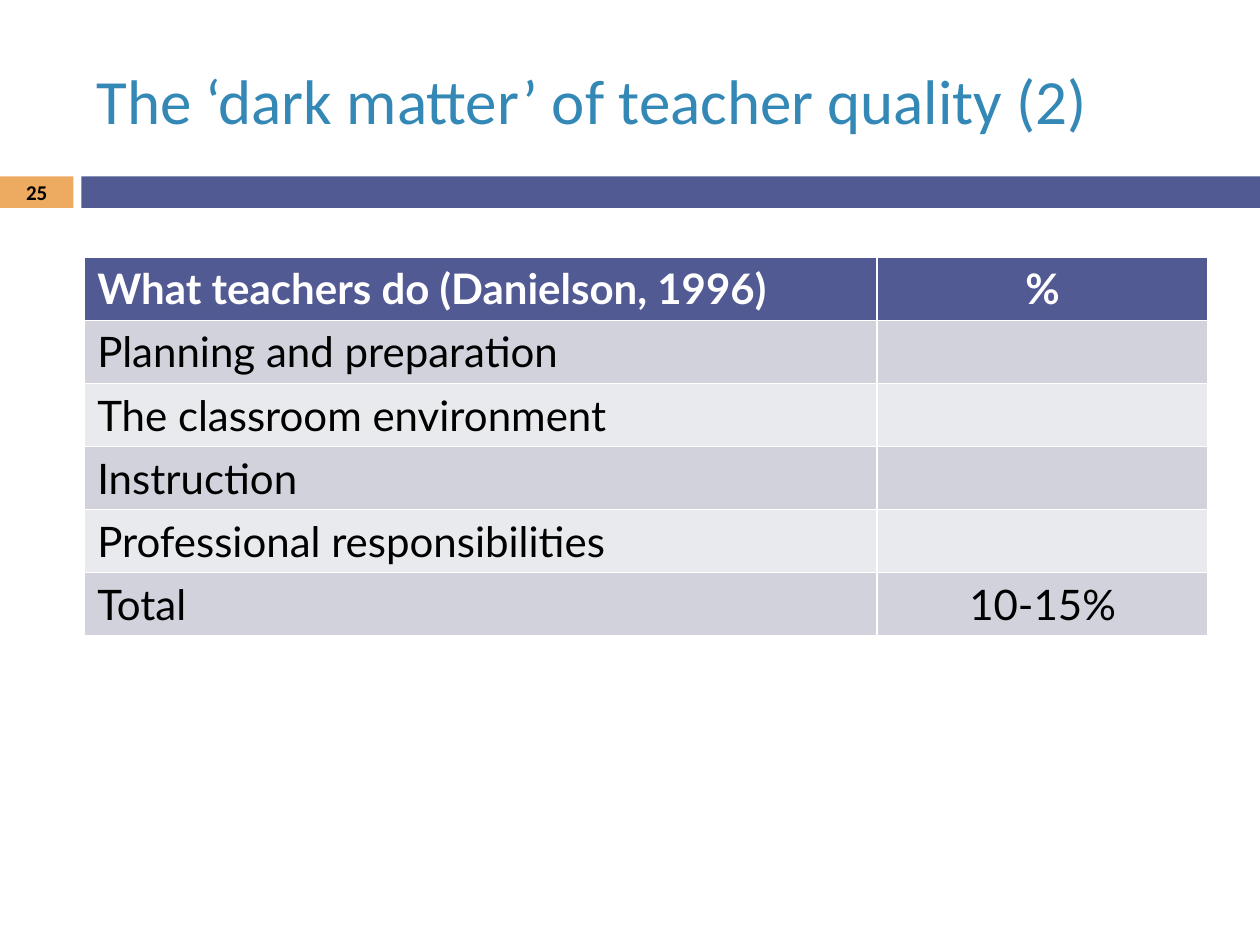
from pptx import Presentation
from pptx.util import Pt
from pptx.dml.color import RGBColor
from pptx.enum.shapes import MSO_SHAPE as Shape
from pptx.enum.text import MSO_ANCHOR as Anchor, MSO_AUTO_SIZE as Fit, PP_ALIGN as Align

WHITE = RGBColor(0xFF, 0xFF, 0xFF)
BLACK = RGBColor(0, 0, 0)
BLUE = RGBColor(0x34, 0x88, 0xB6)
INDIGO = RGBColor(0x52, 0x5A, 0x93)
ORANGE = RGBColor(0xED, 0xAA, 0x61)
BANDS = RGBColor(0xE9, 0xEA, 0xEE), RGBColor(0xD1, 0xD2, 0xDC)

ROWS = [
    ("What teachers do (Danielson, 1996)", "%"),
    ("Planning and preparation", ""),
    ("The classroom environment", ""),
    ("Instruction", ""),
    ("Professional responsibilities", ""),
    ("Total", "10-15%"),
]


def write(frame, text, font="Calibri", size=24, color=BLACK, bold=False, align=Align.LEFT):
    para = frame.paragraphs[0]
    para.alignment = align
    run = para.add_run()
    run.text = text
    run.font.name = font
    run.font.size = Pt(size)
    run.font.bold = bold
    run.font.color.rgb = color


class Deck:
    """Holds the style and the current slide; lengths are in points."""

    head, body = "Calibri", "Lato"

    def __init__(self, wide, high):
        self.file = Presentation()
        self.file.slide_width, self.file.slide_height = Pt(wide), Pt(high)
        self.slide = self.file.slides.add_slide(self.file.slide_layouts[5])

    def bar(self, *box, fill):
        bar = self.slide.shapes.add_shape(Shape.RECTANGLE, *map(Pt, box))
        bar.shadow.inherit = False
        bar.fill.solid()
        bar.fill.fore_color.rgb = fill
        bar.line.fill.background()

    def title(self, text, *box):
        title = self.slide.shapes.title
        title.left, title.top, title.width, title.height = map(Pt, box)
        frame = title.text_frame
        frame.auto_size = Fit.NONE
        frame.vertical_anchor = Anchor.MIDDLE
        write(frame, text, font=self.head, size=36, color=BLUE)

    def label(self, text, *box):
        frame = self.slide.shapes.add_textbox(*map(Pt, box)).text_frame
        frame.word_wrap = True
        frame.vertical_anchor = Anchor.MIDDLE
        write(frame, text, font=self.head, size=12, bold=True, align=Align.CENTER)

    def table(self, rows, left, top, cols, high):
        size = Pt(sum(cols)), Pt(high * len(rows))
        table = self.slide.shapes.add_table(
            len(rows), len(cols), Pt(left), Pt(top), *size).table
        for col, wide in zip(table.columns, cols):
            col.width = Pt(wide)
        for r, row in enumerate(rows):
            top_row = r == 0
            table.rows[r].height = Pt(high)
            for c, text in enumerate(row):
                cell = table.cell(r, c)
                cell.fill.solid()
                cell.fill.fore_color.rgb = INDIGO if top_row else BANDS[r % 2]
                if text:
                    write(cell.text_frame, text, font=self.body, bold=top_row,
                          color=WHITE if top_row else BLACK,
                          align=Align.CENTER if c else Align.LEFT)

    def save(self):
        self.file.save("out.pptx")


def main():
    deck = Deck(720, 540)
    # Band below the title, with the page number
    deck.bar(0, 100.8, 42, 18, fill=ORANGE)
    deck.bar(46.5, 100.8, 673.5, 18, fill=INDIGO)
    deck.label("25", 0, 100, 42, 19.5)
    # Title
    deck.title("The ‘dark matter’ of teacher quality (2)", 48, 18, 642, 78)
    # Table of teaching tasks
    deck.table(ROWS, 48.4, 147, (452.8, 189.2), 36)
    deck.save()


if __name__ == "__main__":
    main()
